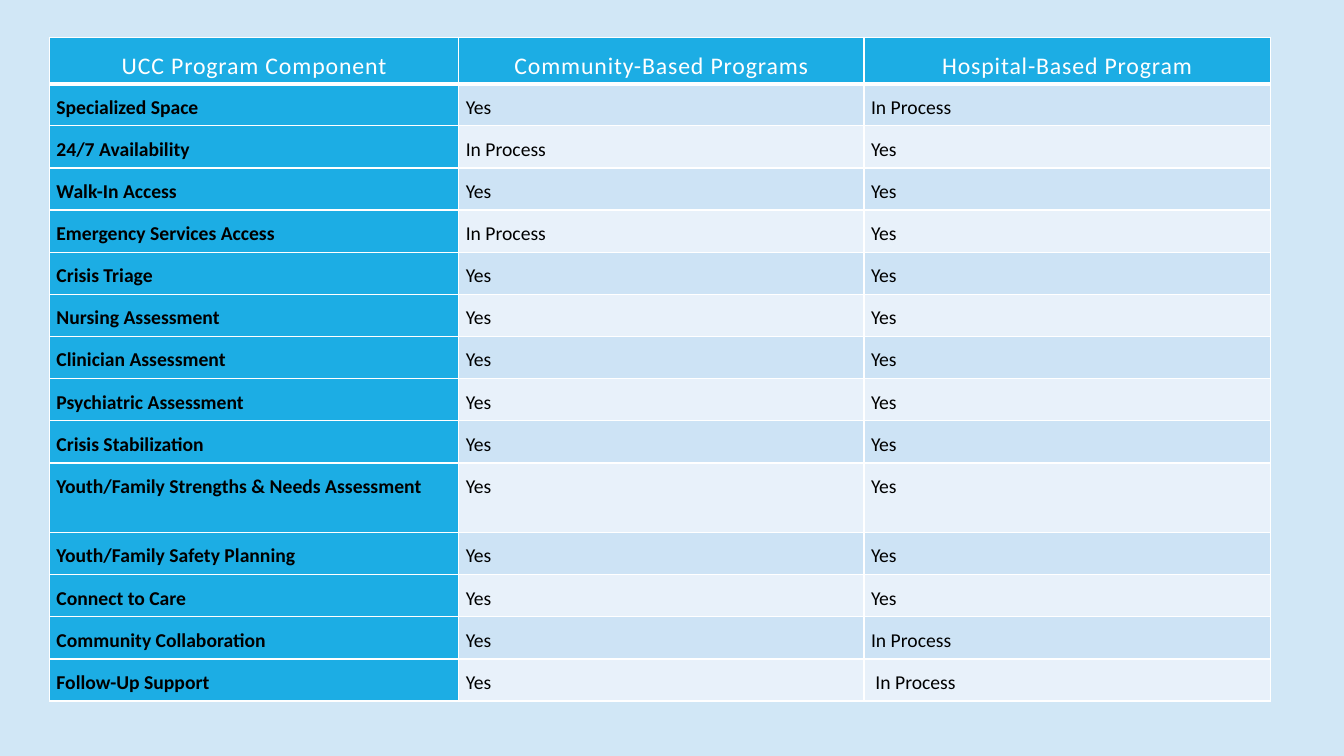
from lxml import etree
from pptx import Presentation
from pptx.dml.color import RGBColor
from pptx.enum.text import MSO_ANCHOR, PP_ALIGN
from pptx.oxml.ns import qn
from pptx.util import Inches, Pt

CENTER, LEFT = PP_ALIGN.CENTER, PP_ALIGN.LEFT
MIDDLE, TOP = MSO_ANCHOR.MIDDLE, MSO_ANCHOR.TOP

BACKGROUND, ACCENT = "D1E7F6", "1CADE4"
BANDS = ("CDE3F5", "E8F1FA")
WHITE, BLACK = "FFFFFF", "000000"
FONT = "Calibri"

# Table geometry in inches
TABLE_LEFT, TABLE_TOP, TABLE_HEIGHT = 0.49, 0.37, 6.59
COLUMN_WIDTHS = (4.06, 4.02, 4.03)
HEADER_HEIGHT, TALL_HEIGHT = 0.46, 0.69
TALL_COMPONENT = "Youth/Family Strengths & Needs Assessment"

HEADINGS = ("UCC Program Component", "Community-Based Programs", "Hospital-Based Program")
PROGRAMS = (
    ("Specialized Space", "Yes", "In Process"),
    ("24/7 Availability", "In Process", "Yes"),
    ("Walk-In Access", "Yes", "Yes"),
    ("Emergency Services Access", "In Process", "Yes"),
    ("Crisis Triage", "Yes", "Yes"),
    ("Nursing Assessment", "Yes", "Yes"),
    ("Clinician Assessment", "Yes", "Yes"),
    ("Psychiatric Assessment", "Yes", "Yes"),
    ("Crisis Stabilization", "Yes", "Yes"),
    (TALL_COMPONENT, "Yes", "Yes"),
    ("Youth/Family Safety Planning", "Yes", "Yes"),
    ("Connect to Care", "Yes", "Yes"),
    ("Community Collaboration", "Yes", "In Process"),
    ("Follow-Up Support", "Yes", " In Process"),
)


def paint(fill, color):
    fill.solid()
    fill.fore_color.rgb = RGBColor.from_string(color)


def add_borders(cell, top=1, bottom=1):
    properties = cell._tc.get_or_add_tcPr()
    for side, width in (("L", 1), ("R", 1), ("T", top), ("B", bottom)):
        line = etree.SubElement(properties, qn(f"a:ln{side}"), w=str(Pt(width)))
        solid = etree.SubElement(line, qn("a:solidFill"))
        etree.SubElement(solid, qn("a:srgbClr"), val=WHITE)


def write_cell(cell, text, size, color, bold=False, align=LEFT, anchor=TOP):
    cell.margin_left = cell.margin_right = Inches(0.07)
    cell.margin_top, cell.margin_bottom = Inches(0.1), 0
    cell.vertical_anchor = anchor
    cell.text_frame.text = text
    paragraph = cell.text_frame.paragraphs[0]
    paragraph.alignment = align
    paragraph.line_spacing = 1.07
    font = paragraph.runs[0].font
    font.name, font.size, font.bold = FONT, Pt(size), bold
    font.color.rgb = RGBColor.from_string(color)
    return font


def write_header(cells):
    for cell, heading in zip(cells, HEADINGS):
        add_borders(cell, bottom=3)
        paint(cell.fill, ACCENT)
        font = write_cell(cell, heading, 17, WHITE, align=CENTER, anchor=MIDDLE)
        font._element.set("spc", "60")


def write_program(cells, number, values):
    for column, (cell, value) in enumerate(zip(cells, values)):
        is_component = column == 0
        add_borders(cell, top=3 if number == 0 else 1)
        paint(cell.fill, ACCENT if is_component else BANDS[number % 2])
        write_cell(cell, value, 14, BLACK, bold=is_component)


def add_program_table(slide):
    table = slide.shapes.add_table(
        len(PROGRAMS) + 1, len(HEADINGS), Inches(TABLE_LEFT), Inches(TABLE_TOP),
        Inches(sum(COLUMN_WIDTHS)), Inches(TABLE_HEIGHT)).table
    for column, width in zip(table.columns, COLUMN_WIDTHS):
        column.width = Inches(width)

    # Ordinary rows share the height left by the header and the tall row
    row_height = (TABLE_HEIGHT - HEADER_HEIGHT - TALL_HEIGHT) / (len(PROGRAMS) - 1)
    header, *program_rows = table.rows
    header.height = Inches(HEADER_HEIGHT)
    write_header(header.cells)
    for number, (row, values) in enumerate(zip(program_rows, PROGRAMS)):
        row.height = Inches(TALL_HEIGHT if values[0] == TALL_COMPONENT else row_height)
        write_program(row.cells, number, values)


def main():
    deck = Presentation()
    deck.slide_width, deck.slide_height = Inches(13.33), Inches(7.5)
    slide = deck.slides.add_slide(deck.slide_layouts[6])
    paint(slide.background.fill, BACKGROUND)
    add_program_table(slide)
    deck.save("out.pptx")


if __name__ == "__main__":
    main()
